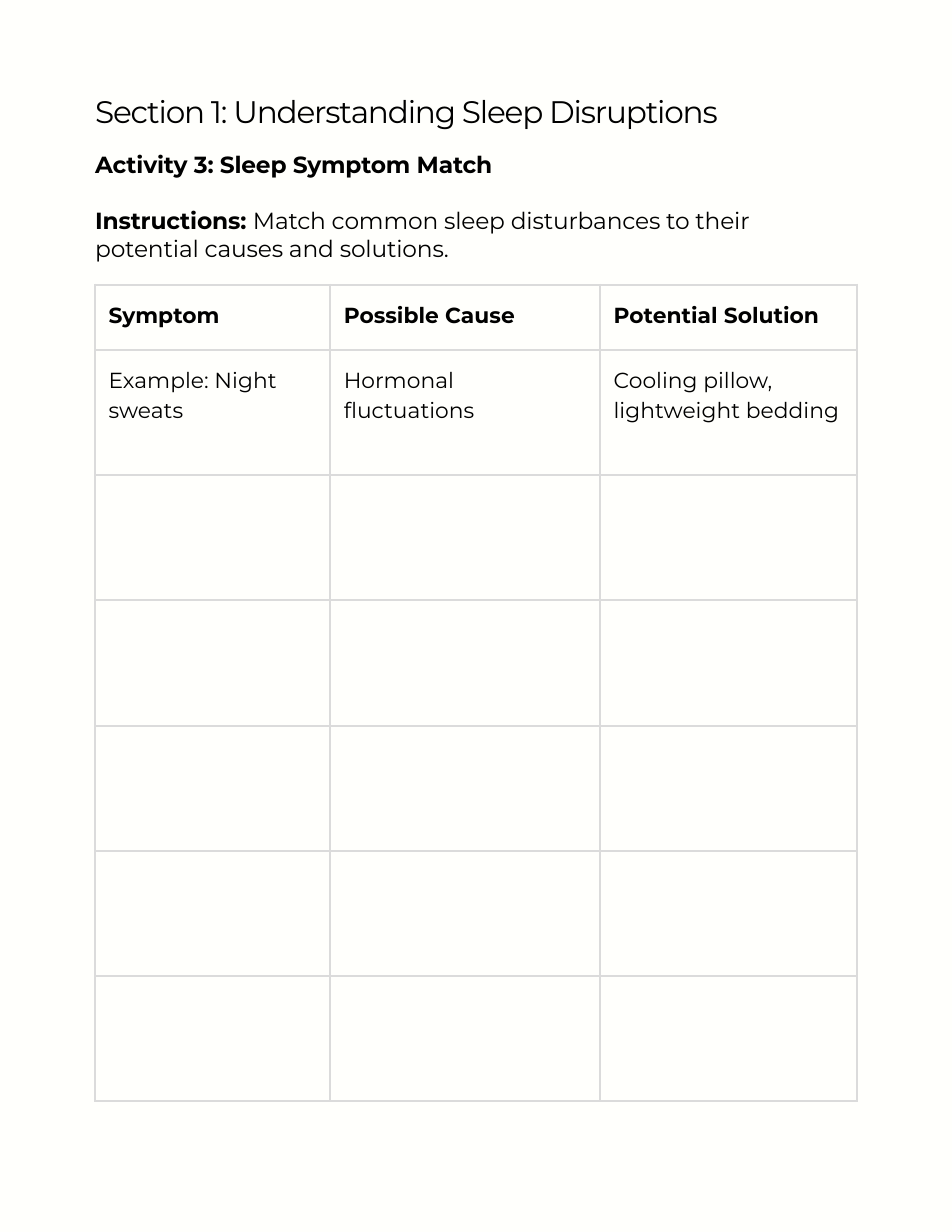
import pptx
import pptx.util
import pptx.dml.color
import pptx.enum.text
import pptx.oxml
import pptx.oxml.ns

Pt = pptx.util.Pt
FONT = "Montserrat"
INK, PAPER, RULE = "000000", "FFFFFC", "DBDBDB"
LEFT, WIDTH = 61.2, 489.6

HEADERS = ["Symptom", "Possible Cause", "Potential Solution"]
EXAMPLE = ["Example: Night sweats", "Hormonal fluctuations",
           "Cooling pillow, lightweight bedding"]
BLANK_ROWS = 5


def color(value):
    return pptx.dml.color.RGBColor.from_string(value)


def add_run(p, text, size=15, bold=False, spacing=0, line=18):
    """Append a run; spacing is the letter spacing and line the line height, in points."""
    p.line_spacing = Pt(line)
    r = p.add_run()
    r.text = text
    r.font.name = FONT
    r.font.size = Pt(size)
    r.font.bold = bold
    r.font.color.rgb = color(INK)
    if spacing:
        r._r.get_or_add_rPr().set("spc", str(round(spacing * 100)))


def add_text_box(s, x, y, w, h):
    tf = s.shapes.add_textbox(Pt(x), Pt(y), Pt(w), Pt(h)).text_frame
    tf.margin_left = tf.margin_right = tf.margin_top = tf.margin_bottom = 0
    tf.word_wrap = True
    tf.auto_size = pptx.enum.text.MSO_AUTO_SIZE.SHAPE_TO_FIT_TEXT
    return tf


def add_section_title(s, x, y, w, h):
    tf = add_text_box(s, x, y, w, h)
    add_run(tf.paragraphs[0], "Section 1: Understanding Sleep Disruptions",
            size=20, spacing=-0.8)


def add_activity_intro(s, x, y, w, h):
    tf = add_text_box(s, x, y, w, h)
    add_run(tf.paragraphs[0], "Activity 3: Sleep Symptom Match", bold=True, spacing=-0.1)
    p = tf.add_paragraph()
    p.space_before = Pt(18)
    add_run(p, "Instructions: ", bold=True, spacing=-0.1)
    add_run(p, "Match common sleep disturbances to their potential causes and solutions.",
            spacing=-0.1)


def set_borders(cell, value, width):
    tc_pr = cell._tc.get_or_add_tcPr()
    for side in ("lnL", "lnR", "lnT", "lnB"):
        tc_pr.append(pptx.oxml.parse_xml(
            f'<a:{side} {pptx.oxml.ns.nsdecls("a")} w="{Pt(width)}">'
            f'<a:solidFill><a:srgbClr val="{value}"/></a:solidFill></a:{side}>'))


def add_match_table(s, x, y, w, h):
    rows = [HEADERS, EXAMPLE] + [[""] * len(HEADERS)] * BLANK_ROWS
    table = s.shapes.add_table(len(rows), len(HEADERS),
                               Pt(x), Pt(y), Pt(w), Pt(h)).table
    table.first_row = table.horz_banding = False

    first_w, second_w, header_h = 151.2, 173.5, 42
    for column, width in zip(table.columns, (first_w, second_w, w - first_w - second_w)):
        column.width = Pt(width)
    for row in table.rows:
        row.height = Pt((h - header_h) / (len(rows) - 1))
    table.rows[0].height = Pt(header_h)

    for i, texts in enumerate(rows):
        for j, text in enumerate(texts):
            cell = table.cell(i, j)
            set_borders(cell, RULE, 1.5)
            cell.fill.background()
            cell.margin_left = cell.margin_right = Pt(8.64)
            cell.margin_top = cell.margin_bottom = Pt(8.64)
            if text:
                add_run(cell.text_frame.paragraphs[0], text,
                        size=14, bold=i == 0, line=19.6)


def main():
    prs = pptx.Presentation()
    prs.slide_width, prs.slide_height = Pt(612), Pt(792)
    s = prs.slides.add_slide(prs.slide_layouts[6])
    s.background.fill.solid()
    s.background.fill.fore_color.rgb = color(PAPER)
    add_section_title(s, LEFT, 65.5, WIDTH, 19.5)
    add_activity_intro(s, LEFT, 96.5, WIDTH, 67)
    add_match_table(s, LEFT, 183, WIDTH, 525)
    prs.save("out.pptx")


if __name__ == "__main__":
    main()
